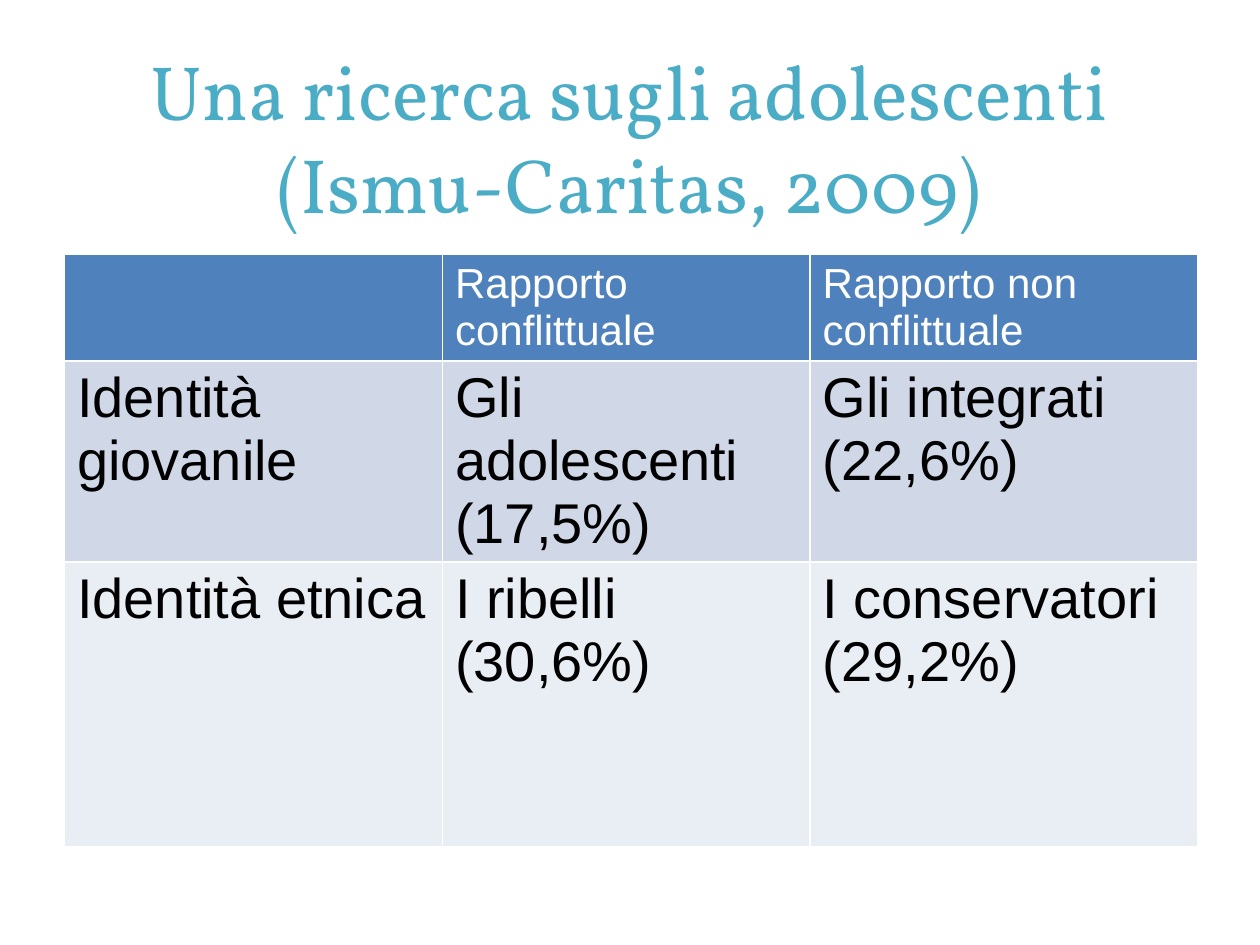
from dataclasses import dataclass

from lxml import etree
from pptx import Presentation
from pptx.dml.color import RGBColor
from pptx.enum.text import MSO_ANCHOR, MSO_AUTO_SIZE, PP_ALIGN
from pptx.oxml.ns import qn
from pptx.util import Cm, Pt

CENTER = PP_ALIGN.CENTER
TOP = MSO_ANCHOR.TOP
NO_AUTOFIT = MSO_AUTO_SIZE.NONE
TITLE_ONLY = 5
WHITE = "FFFFFF"


@dataclass
class TableRow:
    height: float
    fill: str
    color: str
    size: int
    texts: tuple[str, ...]


COLUMN_WIDTHS = (7.62, 7.41, 7.82)
ROWS = (
    TableRow(1.83, "4F81BD", WHITE, 24,
             ("", "Rapporto conflittuale", "Rapporto non conflittuale")),
    TableRow(3.81, "D0D8E8", "000000", 32,
             ("Identità giovanile", "Gli adolescenti (17,5%)", "Gli integrati (22,6%)")),
    TableRow(5.74, "E9EDF4", "000000", 32,
             ("Identità etnica", "I ribelli (30,6%)", "I conservatori (29,2%)")),
)


def rgb(value: str) -> RGBColor:
    return RGBColor.from_string(value)


def add_run(paragraph, text: str, font_name: str, size: int, color: str) -> None:
    run = paragraph.add_run()
    run.text = text
    run.font.name = font_name
    run.font.size = Pt(size)
    run.font.bold = False
    run.font.color.rgb = rgb(color)


def set_borders(cell) -> None:
    properties = cell._tc.get_or_add_tcPr()
    for side in ("lnL", "lnR", "lnT", "lnB"):
        line = etree.SubElement(properties, qn(f"a:{side}"), w=str(Pt(1)))
        fill = etree.SubElement(line, qn("a:solidFill"))
        etree.SubElement(fill, qn("a:srgbClr"), val=WHITE)


def fill_cell(cell, text: str, row: TableRow) -> None:
    set_borders(cell)
    cell.fill.solid()
    cell.fill.fore_color.rgb = rgb(row.fill)
    if text:
        add_run(cell.text_frame.paragraphs[0], text, "Arial", row.size, row.color)


def add_title(slide, text: str) -> None:
    title = slide.shapes.title
    title.left, title.top, title.width, title.height = Cm(1.27), Cm(0.76), Cm(22.86), Cm(3.18)
    frame = title.text_frame
    frame.auto_size = NO_AUTOFIT
    frame.vertical_anchor = TOP
    paragraph = frame.paragraphs[0]
    paragraph.alignment = CENTER
    add_run(paragraph, text, "Vollkorn", 44, "4BACC6")


def add_research_table(slide) -> None:
    table = slide.shapes.add_table(
        len(ROWS), len(COLUMN_WIDTHS), Cm(1.3), Cm(5.13),
        Cm(sum(COLUMN_WIDTHS)), Cm(sum(row.height for row in ROWS))).table
    for column, width in zip(table.columns, COLUMN_WIDTHS):
        column.width = Cm(width)
    for row_index, row in enumerate(ROWS):
        table.rows[row_index].height = Cm(row.height)
        for column_index, text in enumerate(row.texts):
            fill_cell(table.cell(row_index, column_index), text, row)


def main() -> None:
    presentation = Presentation()
    presentation.slide_width, presentation.slide_height = Cm(25.4), Cm(19.05)
    slide = presentation.slides.add_slide(presentation.slide_layouts[TITLE_ONLY])
    # Title
    add_title(slide, "Una ricerca sugli adolescenti (Ismu-Caritas, 2009)")
    # Table
    add_research_table(slide)
    presentation.save("out.pptx")


if __name__ == "__main__":
    main()
